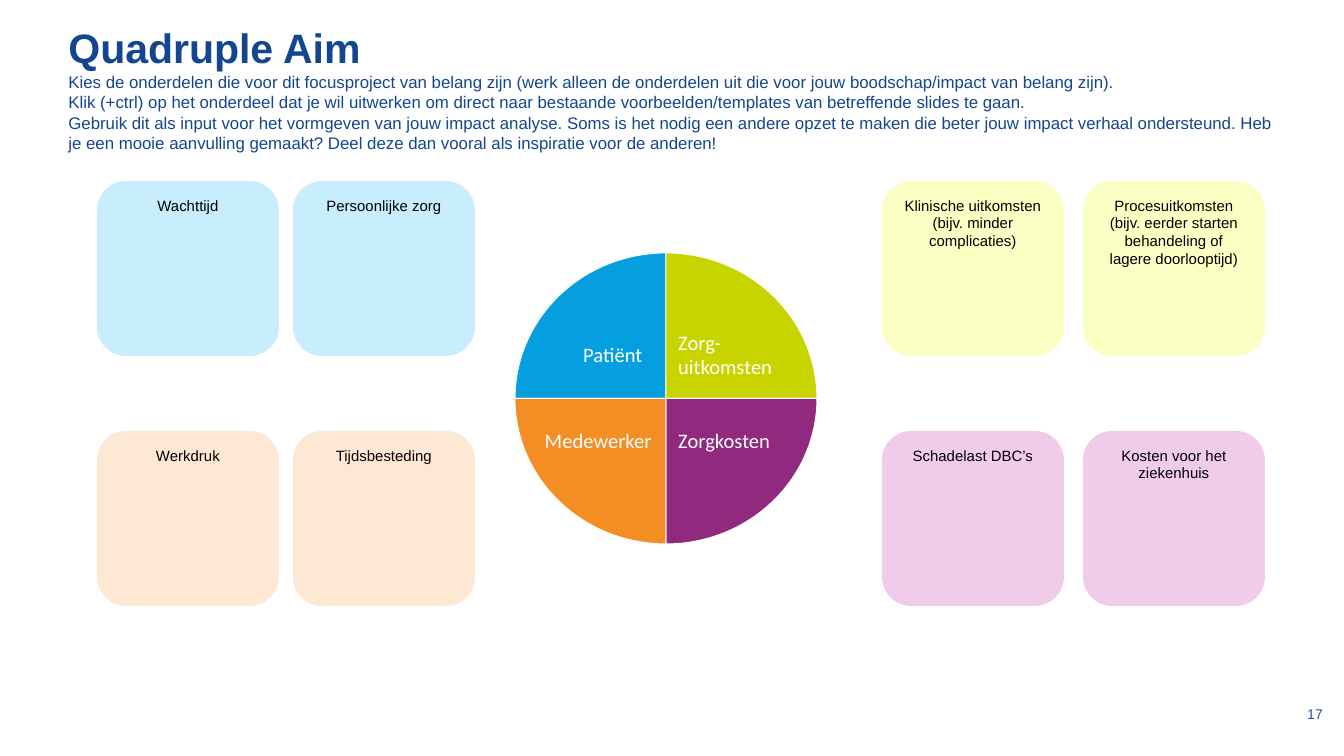
from dataclasses import dataclass

from pptx import Presentation
from pptx.dml.color import RGBColor
from pptx.enum.shapes import MSO_SHAPE
from pptx.enum.text import MSO_ANCHOR, MSO_AUTO_SIZE, PP_ALIGN
from pptx.util import Pt

PIE = MSO_SHAPE.PIE
ROUND = MSO_SHAPE.ROUNDED_RECTANGLE
TOP, MIDDLE = MSO_ANCHOR.TOP, MSO_ANCHOR.MIDDLE
LEFT, CENTER, RIGHT = PP_ALIGN.LEFT, PP_ALIGN.CENTER, PP_ALIGN.RIGHT
FIXED = MSO_AUTO_SIZE.NONE
SCALE = 914400 / 134.4


@dataclass(frozen=True)
class Theme:
    """Colours, fonts and type sizes of the slide."""
    navy: str = "13468F"
    page: str = "2D4F9E"
    black: str = "000000"
    white: str = "FFFFFF"
    blue: str = "059EDF"
    lime: str = "C8D400"
    orange: str = "F38D24"
    plum: str = "91297F"
    sky: str = "C8EEFE"
    lemon: str = "FCFFC3"
    peach: str = "FDE8D3"
    pink: str = "F1CCEA"
    sans: str = "Arial"
    label: str = "Calibri"
    head: float = 22
    intro: float = 9
    tile: float = 8
    wedge: float = 11
    small: float = 7.5


THEME = Theme()

TITLE = "Quadruple Aim"
INTRO = [
    "Kies de onderdelen die voor dit focusproject van belang zijn (werk alleen de onderdelen uit "
    "die voor jouw boodschap/impact van belang zijn).",
    "Klik (+ctrl) op het onderdeel dat je wil uitwerken om direct naar bestaande "
    "voorbeelden/templates van betreffende slides te gaan.",
    "Gebruik dit als input voor het vormgeven van jouw impact analyse. Soms is het nodig een andere "
    "opzet te maken die beter jouw impact verhaal ondersteund. Heb je een mooie aanvulling gemaakt? "
    "Deel deze dan vooral als inspiratie voor de anderen!",
]

COLS = (97, 293, 882, 1083)
ROWS = (181, 431)
TILES = [
    [("Wachttijd", THEME.sky), ("Persoonlijke zorg", THEME.sky),
     ("Klinische uitkomsten (bijv. minder complicaties)", THEME.lemon),
     ("Procesuitkomsten (bijv. eerder starten behandeling of lagere doorlooptijd)", THEME.lemon)],
    [("Werkdruk", THEME.peach), ("Tijdsbesteding", THEME.peach),
     ("Schadelast DBC’s", THEME.pink), ("Kosten voor het ziekenhuis", THEME.pink)],
]

WEDGES = [
    (THEME.blue, 180, "Patiënt", (570, 335, 97, 39), LEFT),
    (THEME.lime, 270, "Zorg-uitkomsten", (665, 323, 145, 63), LEFT),
    (THEME.plum, 0, "Zorgkosten", (665, 421, 145, 39), LEFT),
    (THEME.orange, 90, "Medewerker", (520, 421, 145, 39), RIGHT),
]


def px(*nums):
    """Turn lengths in px into EMU."""
    return [round(num * SCALE) for num in nums]


def style(para, size, color, face=THEME.sans, align=LEFT, bold=False):
    """Format a paragraph and its runs."""
    para.alignment = align
    for run in para.runs:
        run.font.name = face
        run.font.size = Pt(size)
        run.font.bold = bold
        run.font.color.rgb = RGBColor.from_string(color)


def add_head(slide):
    """Fill the title placeholder with the heading and its introduction."""
    head = slide.shapes.title
    head.left, head.top, head.width, head.height = px(55, 16, 1234, 133)
    frame = head.text_frame
    frame.auto_size = FIXED
    frame.word_wrap = True
    frame.vertical_anchor = TOP
    frame.text = "\n".join([TITLE, *INTRO])
    first, *rest = frame.paragraphs
    style(first, THEME.head, THEME.navy, bold=True)
    for para in rest:
        style(para, THEME.intro, THEME.navy)


def add_form(slide, kind, box, color):
    """Add a filled preset shape without line or shadow."""
    form = slide.shapes.add_shape(kind, *px(*box))
    form.shadow.inherit = False
    form.fill.solid()
    form.fill.fore_color.rgb = RGBColor.from_string(color)
    form.line.fill.background()
    return form


def add_tile(slide, text, left, top, color):
    """Add a rounded tile with its caption at the top."""
    tile = add_form(slide, ROUND, (left, top, 182, 175), color)
    frame = tile.text_frame
    frame.word_wrap = True
    frame.vertical_anchor = TOP
    frame.text = text
    style(frame.paragraphs[0], THEME.tile, THEME.black, align=CENTER)


def add_wedge(slide, color, start):
    """Add a quarter of the circle from a start angle in degrees."""
    wedge = add_form(slide, PIE, (515, 253, 302, 291), color)
    wedge.adjustments[0] = start * 0.6
    wedge.adjustments[1] = (start + 90) % 360 * 0.6
    wedge.line.color.rgb = RGBColor.from_string(THEME.white)
    wedge.line.width = Pt(0.5)


def add_text(slide, text, box, size, color, face, align=LEFT, anchor=TOP):
    """Add a wrapped text box of one paragraph."""
    frame = slide.shapes.add_textbox(*px(*box)).text_frame
    frame.word_wrap = True
    frame.vertical_anchor = anchor
    frame.text = text
    style(frame.paragraphs[0], size, color, face, align)


def main():
    """Build and save the slide."""
    deck = Presentation()
    deck.slide_width, deck.slide_height = px(1344, 756)
    slide = deck.slides.add_slide(deck.slide_layouts[5])
    add_head(slide)
    add_text(slide, "17", (1294, 698, 52, 31), THEME.small, THEME.page, THEME.sans, anchor=MIDDLE)
    for top, row in zip(ROWS, TILES):
        for left, (text, color) in zip(COLS, row):
            add_tile(slide, text, left, top, color)
    for color, start, *_ in WEDGES:
        add_wedge(slide, color, start)
    for _, _, text, box, align in WEDGES:
        add_text(slide, text, box, THEME.wedge, THEME.white, THEME.label, align)
    deck.save("out.pptx")


if __name__ == "__main__":
    main()
